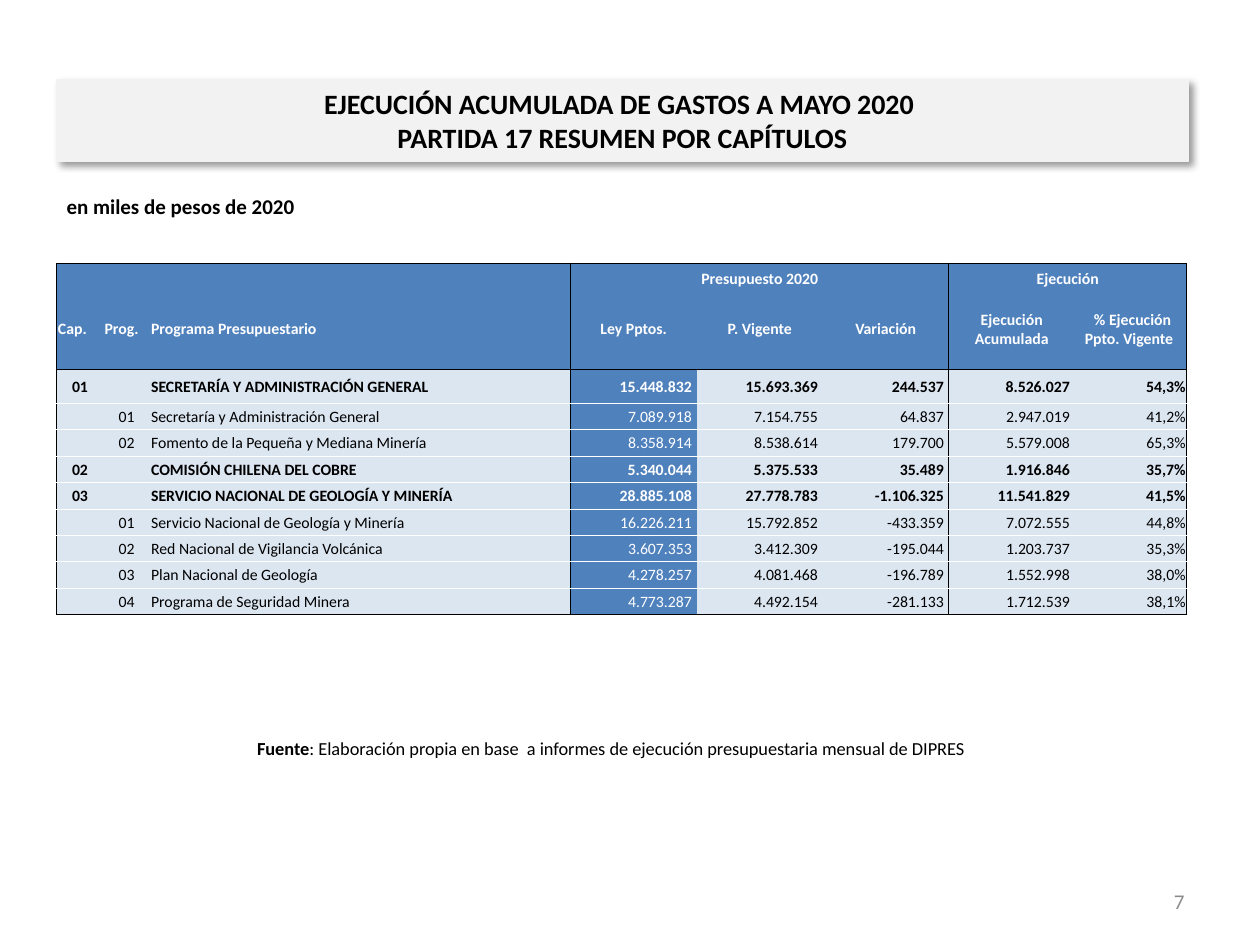
from lxml import etree
from pptx import Presentation
from pptx import util as u
from pptx.dml.color import RGBColor
from pptx.enum import shapes, text
from pptx.oxml import parse_xml
from pptx.oxml.ns import qn

BLACK = RGBColor(0, 0, 0)
WHITE = RGBColor(0xFF, 0xFF, 0xFF)
GRAY = RGBColor(0x8C, 0x8C, 0x8C)
PALE = RGBColor(0xF2, 0xF2, 0xF2)
BLUE = RGBColor(0x4F, 0x81, 0xBD)
LIGHT = RGBColor(0xDC, 0xE6, 0xF1)
MID, BASE, TOP = text.MSO_ANCHOR.MIDDLE, text.MSO_ANCHOR.BOTTOM, text.MSO_ANCHOR.TOP
LEFT, MIDST, RIGHT, JUST = (text.PP_ALIGN.LEFT, text.PP_ALIGN.CENTER,
                            text.PP_ALIGN.RIGHT, text.PP_ALIGN.JUSTIFY)


def write(frame, parts, size, color, align):
    """Fill the first paragraph with (words, bold) parts."""
    para = frame.paragraphs[0]
    para.alignment = align
    for words, bold in parts:
        for i, line in enumerate(words.split("\n")):
            if i:
                para.add_line_break()
            run = para.add_run()
            run.text = line
            look = {"name": "Calibri", "size": u.Pt(size), "bold": bold}
            for key, val in look.items():
                setattr(run.font, key, val)
            run.font.color.rgb = color


def edge(cell, side, color):
    """Draw one cell border, or none when color is None."""
    line = etree.SubElement(cell._tc.get_or_add_tcPr(), qn("a:ln" + side), w="6350")
    if color is None:
        etree.SubElement(line, qn("a:noFill"))
    else:
        fill = etree.SubElement(line, qn("a:solidFill"))
        etree.SubElement(fill, qn("a:srgbClr"), val=str(color))


deck = Presentation()
deck.slide_width, deck.slide_height = u.Inches(10), u.Inches(7.5)
slide = deck.slides.add_slide(deck.slide_layouts[6])

# Page number, source note and unit note
notes = [
    ((7.17, 6.95, 2.33, 0.4), [("7", False)], 12, GRAY, RIGHT, MID),
    ((0.43, 5.8, 8.84, 0.4),
     [("Fuente", True),
      (": Elaboración propia en base  a informes de ejecución presupuestaria mensual de DIPRES", False)],
     10.5, BLACK, MIDST, TOP),
    ((0.43, 1.49, 8.25, 0.37), [("en miles de pesos de 2020", True)], 12, BLACK, LEFT, TOP),
]
for place, parts, size, color, align, anchor in notes:
    frame = slide.shapes.add_textbox(*map(u.Inches, place)).text_frame
    frame.word_wrap = True
    frame.vertical_anchor = anchor
    write(frame, parts, size, color, align)

# Title band with a soft shadow
band = slide.shapes.add_shape(shapes.MSO_SHAPE.RECTANGLE,
                              *map(u.Inches, (0.45, 0.63, 8.98, 0.65)))
band.fill.solid()
band.fill.fore_color.rgb = PALE
band.line.color.rgb = PALE
band.line.width = u.Pt(0.75)
band.shadow.inherit = False
glow = band._element.spPr.find(qn("a:effectLst"))
glow.append(parse_xml(
    '<a:outerShdw xmlns:a="http://schemas.openxmlformats.org/drawingml/2006/main" '
    'blurRad="50800" dist="38100" dir="2700000" algn="tl" rotWithShape="0">'
    '<a:srgbClr val="000000"><a:alpha val="40000"/></a:srgbClr></a:outerShdw>'))
frame = band.text_frame
fit = {"word_wrap": True, "vertical_anchor": MID, "auto_size": text.MSO_AUTO_SIZE.SHAPE_TO_FIT_TEXT,
       "margin_left": u.Inches(0.11), "margin_right": u.Inches(0.11)}
for key, val in fit.items():
    setattr(frame, key, val)
write(frame, [("EJECUCIÓN ACUMULADA DE GASTOS A MAYO 2020 \nPARTIDA 17 RESUMEN POR CAPÍTULOS", True)],
      16, BLACK, MIDST)

# Budget table
rows = [
    ("", "", "", "Presupuesto 2020", "", "", "Ejecución", ""),
    ("Cap.", "Prog.", "Programa Presupuestario", "Ley Pptos.", "P. Vigente", "Variación",
     "Ejecución Acumulada", " % Ejecución Ppto. Vigente "),
    ("01", "", "SECRETARÍA Y ADMINISTRACIÓN GENERAL",
     "15.448.832 ", "15.693.369 ", "244.537 ", "8.526.027 ", "54,3%"),
    ("", "01", "Secretaría y Administración General",
     "7.089.918 ", "7.154.755 ", "64.837 ", "2.947.019 ", "41,2%"),
    ("", "02", "Fomento de la Pequeña y Mediana Minería",
     "8.358.914 ", "8.538.614 ", "179.700 ", "5.579.008 ", "65,3%"),
    ("02", "", "COMISIÓN CHILENA DEL COBRE",
     "5.340.044 ", "5.375.533 ", "35.489 ", "1.916.846 ", "35,7%"),
    ("03", "", "SERVICIO NACIONAL DE GEOLOGÍA Y MINERÍA",
     "28.885.108 ", "27.778.783 ", "-1.106.325 ", "11.541.829 ", "41,5%"),
    ("", "01", "Servicio Nacional de Geología y Minería",
     "16.226.211 ", "15.792.852 ", "-433.359 ", "7.072.555 ", "44,8%"),
    ("", "02", "Red Nacional de Vigilancia Volcánica",
     "3.607.353 ", "3.412.309 ", "-195.044 ", "1.203.737 ", "35,3%"),
    ("", "03", "Plan Nacional de Geología",
     "4.278.257 ", "4.081.468 ", "-196.789 ", "1.552.998 ", "38,0%"),
    ("", "04", "Programa de Seguridad Minera",
     "4.773.287 ", "4.492.154 ", "-281.133 ", "1.712.539 ", "38,1%"),
]
last = len(rows) - 1
grid = slide.shapes.add_table(len(rows), 8, *map(u.Inches, (0.45, 2.09, 8.98, 2.77))).table
grid.first_row = grid.horz_banding = False
for col, wide in zip(grid.columns, [0.37, 0.37, 3.34, 1, 1, 1, 1, 0.89]):
    col.width = u.Inches(wide)
for row, high in zip(grid.rows, [0.2, 0.64, 0.27] + [0.21] * 8):
    row.height = u.Inches(high)
grid.cell(0, 3).merge(grid.cell(0, 5))
grid.cell(0, 6).merge(grid.cell(0, 7))

for r, row in enumerate(rows):
    head = r < 2
    for c, words in enumerate(row):
        cell = grid.cell(r, c)
        dark = head or c == 3
        # Black frames around column groups, white rules between body rows
        edge(cell, "L", BLACK if c in (0, 3, 6) else None)
        edge(cell, "R", BLACK if c in (2, 5, 7) or (r, c) in ((0, 3), (0, 6)) else None)
        edge(cell, "T", BLACK if r in (0, 2) else None if head else WHITE)
        edge(cell, "B", BLACK if r in (1, last) else None if head else WHITE)
        cell.fill.solid()
        cell.fill.fore_color.rgb = BLUE if dark else LIGHT
        pad = {"margin_left": u.Inches(0.01), "margin_right": u.Inches(0.01),
               "margin_top": u.Inches(0.01), "margin_bottom": 0,
               "vertical_anchor": MID if r else BASE}
        for key, val in pad.items():
            setattr(cell, key, val)
        if head:
            align = LEFT if c < 3 else MIDST
        else:
            align = MIDST if c < 2 else JUST if c == 2 else RIGHT
        if words:
            write(cell.text_frame, [(words, head or row[0] != "")], 9,
                  WHITE if dark else BLACK, align)
        else:
            etree.SubElement(cell.text_frame.paragraphs[0]._p, qn("a:endParaRPr"), sz="900")

deck.save("out.pptx")
